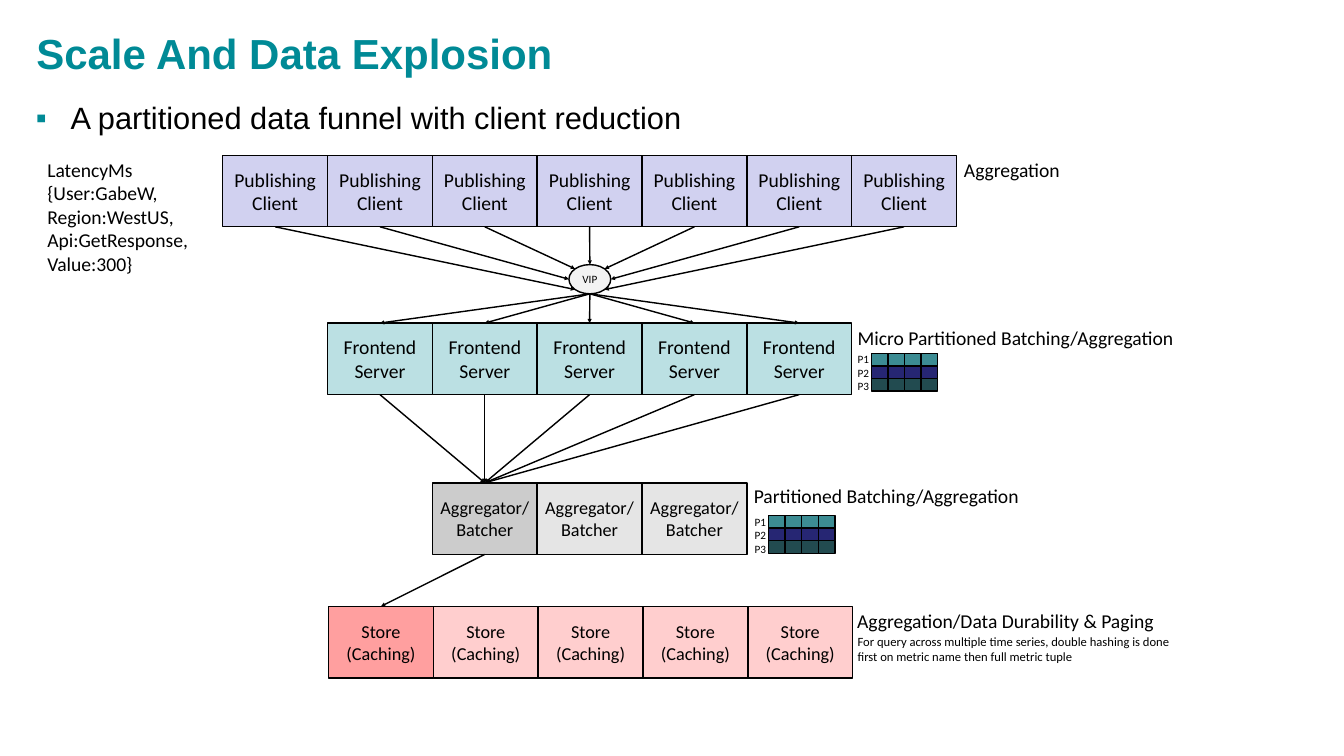
from math import cos, radians, sin

from lxml import etree
from pptx import Presentation
from pptx.dml.color import RGBColor
from pptx.enum.shapes import MSO_CONNECTOR, MSO_SHAPE
from pptx.enum.text import MSO_ANCHOR, PP_ALIGN
from pptx.oxml.ns import qn
from pptx.util import Inches, Pt

COLORS = {
    "title": "008A96", "ink": "000000", "client": "D1D1F0", "vip": "F2F2F2",
    "frontend": "BBE0E3", "aggregator": "CCCCCC", "store": "FF9F9F",
    "p1": "3C8C93", "p2": "262673", "p3": "224B50",
}
NODE_W, NODE_H = 2.08, 1.42
CELL_W, CELL_H = 0.33, 0.25


def rgb(name):
    return RGBColor.from_string(COLORS[name])


def style(paragraph, size, font="Calibri", color="ink", align=None, bold=False):
    paragraph.font.size = Pt(size)
    paragraph.font.name = font
    paragraph.font.bold = bold
    paragraph.font.color.rgb = rgb(color)
    if align is not None:
        paragraph.alignment = align


def place(holder, left, top, width, height):
    holder.left, holder.top = Inches(left), Inches(top)
    holder.width, holder.height = Inches(width), Inches(height)
    frame = holder.text_frame
    frame.margin_left = frame.margin_right = Inches(0.04)
    frame.margin_top = frame.margin_bottom = Inches(0.04)
    return frame


def add_heading(slide):
    title = place(slide.shapes.title, 0.68, 0.26, 25.3, 1.57)
    title.text = "Scale And Data Explosion"
    title.vertical_anchor = MSO_ANCHOR.MIDDLE
    style(title.paragraphs[0], 60, "Arial", "title", PP_ALIGN.LEFT, True)

    body = place(slide.placeholders[1], 0.67, 2, 25.31, 11.53)
    body.text = "A partitioned data funnel with client reduction"
    point = body.paragraphs[0]
    props = point._p.get_or_add_pPr()
    props.set("marL", str(Inches(0.69)))
    props.set("indent", str(-Inches(0.69)))
    bullet_color = etree.SubElement(props, qn("a:buClr"))
    etree.SubElement(bullet_color, qn("a:srgbClr"), val=COLORS["title"])
    etree.SubElement(props, qn("a:buFont"), typeface="Arial")
    etree.SubElement(props, qn("a:buChar"), char="▪")
    point.line_spacing = 0.9
    point.space_before = Pt(0)
    style(point, 44, "Arial")


def add_label(slide, left, top, width, height, text, size=28, align=None, wrap=False):
    frame = slide.shapes.add_textbox(
        Inches(left), Inches(top), Inches(width), Inches(height)).text_frame
    frame.word_wrap = wrap
    frame.text = text
    for paragraph in frame.paragraphs:
        style(paragraph, size, align=align)


def add_node(slide, left, top, width, height, color, text="", size=28,
             kind=MSO_SHAPE.RECTANGLE, faded=False):
    node = slide.shapes.add_shape(
        kind, Inches(left), Inches(top), Inches(width), Inches(height))
    node.shadow.inherit = False
    node.fill.solid()
    node.fill.fore_color.rgb = rgb(color)
    if faded:
        fill_color = node._element.spPr.find(qn("a:solidFill")).find(qn("a:srgbClr"))
        etree.SubElement(fill_color, qn("a:alpha"), val="50000")
    node.line.color.rgb = rgb("ink")
    node.line.width = Pt(2)
    if text:
        node.text_frame.text = text
        node.text_frame.vertical_anchor = MSO_ANCHOR.MIDDLE
        for paragraph in node.text_frame.paragraphs:
            style(paragraph, size, align=PP_ALIGN.CENTER)


def add_tier(slide, left, top, count, color, text, size=28, fade_rest=False):
    """Draw a row of touching nodes; return their top and bottom midpoints."""
    for i in range(count):
        add_node(slide, left + i * NODE_W, top, NODE_W, NODE_H, color, text, size,
                 faded=fade_rest and i > 0)
    middles = [left + (i + 0.5) * NODE_W for i in range(count)]
    return [(x, top) for x in middles], [(x, top + NODE_H) for x in middles]


def add_arrow(slide, start, end):
    arrow = slide.shapes.add_connector(
        MSO_CONNECTOR.STRAIGHT, *(Inches(value) for value in (*start, *end)))
    arrow.line.color.rgb = rgb("ink")
    arrow.line.width = Pt(2)
    etree.SubElement(arrow.line._get_or_add_ln(), qn("a:tailEnd"), type="triangle")
    etree.SubElement(arrow._element.spPr, qn("a:effectLst"))


def add_partitions(slide, left, top):
    """Draw three labelled partitions of four cells each."""
    for row, color in enumerate(("p1", "p2", "p3")):
        for column in range(4):
            add_node(slide, left + 0.4 + column * CELL_W, top + 0.06 + row * CELL_H,
                     CELL_W, CELL_H, color)
    add_label(slide, left, top, 0.48, 0.91, "P1\nP2\nP3", 16, PP_ALIGN.CENTER)


def add_vip(slide, left, top, width, height, sources, targets):
    """Draw the VIP ellipse with arrows in around its rim and out of its foot."""
    add_node(slide, left, top, width, height, "vip", "VIP", 16, MSO_SHAPE.OVAL)
    x, y = left + width / 2, top + height / 2
    for i, source in enumerate(sources):
        angle = radians(135 + 45 * i)
        add_arrow(slide, source, (x + width / 2 * cos(angle), y + height / 2 * sin(angle)))
    for target in targets:
        add_arrow(slide, (x, top + height), target)


def add_funnel(slide):
    # Tiers, from clients down to stores
    _, client_feet = add_tier(slide, 4.42, 3.08, 7, "client", "Publishing Client")
    frontend_heads, frontend_feet = add_tier(
        slide, 6.5, 6.41, 5, "frontend", "Frontend\nServer")
    aggregator_heads, aggregator_feet = add_tier(
        slide, 8.58, 9.58, 3, "aggregator", "Aggregator/Batcher", 26, True)
    store_heads, _ = add_tier(slide, 6.52, 12.03, 5, "store", "Store (Caching)", 26, True)

    # Flow between tiers
    add_vip(slide, 11.29, 5.25, 0.83, 0.58, client_feet, frontend_heads)
    for foot in frontend_feet:
        add_arrow(slide, foot, aggregator_heads[0])
    add_arrow(slide, aggregator_feet[0], store_heads[0])

    # Sample metric and tier notes
    add_label(slide, 0.84, 3.08, 3.39, 2.46,
              "LatencyMs\n{User:GabeW,\nRegion:WestUS,\nApi:GetResponse,\nValue:300}")
    add_label(slide, 19.03, 3.08, 2.32, 0.57, "Aggregation")
    add_label(slide, 16.92, 6.41, 7.02, 0.57, "Micro Partitioned Batching/Aggregation")
    add_partitions(slide, 16.89, 6.95)
    add_label(slide, 14.86, 9.55, 5.95, 0.57, "Partitioned Batching/Aggregation")
    add_partitions(slide, 14.85, 10.17)
    add_label(slide, 16.91, 12.03, 6.72, 0.57, "Aggregation/Data Durability & Paging")
    add_label(slide, 16.92, 12.53, 6.7, 1.18,
              "For query across multiple time series, double hashing is done "
              "first on metric name then full metric tuple", 18, wrap=True)


def main():
    deck = Presentation()
    deck.slide_width, deck.slide_height = Inches(26.67), Inches(15)
    slide = deck.slides.add_slide(deck.slide_layouts[1])
    add_heading(slide)
    add_funnel(slide)
    deck.save("out.pptx")


if __name__ == "__main__":
    main()
